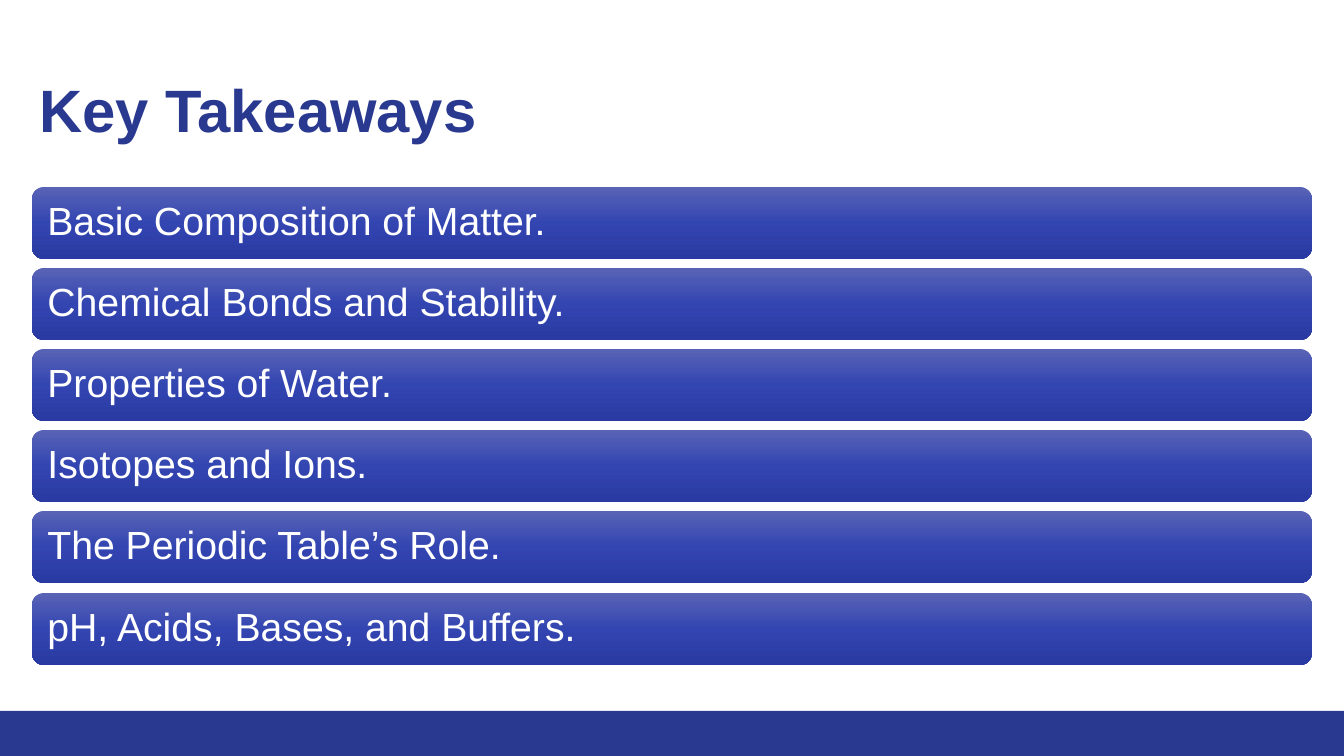
import copy

import pptx
import pptx.dml.color
import pptx.enum.shapes
import pptx.enum.text
import pptx.oxml.ns
import pptx.util

EMU_PER_PX = 12192000 / 1344
COLORS = {
    "navy": "2A3990",
    "white": "FFFFFF",
    "bar_top": "5963B6",
    "bar_middle": "3345B1",
    "bar_bottom": "293AA2",
}
TAKEAWAYS = [
    "Basic Composition of Matter.",
    "Chemical Bonds and Stability.",
    "Properties of Water.",
    "Isotopes and Ions.",
    "The Periodic Table’s Role.",
    "pH, Acids, Bases, and Buffers.",
]
FIRST_TOP, LAST_TOP = 187, 593


def px(length):
    return pptx.util.Emu(round(length * EMU_PER_PX))


def write_text(shape, text, size, color, bold=False):
    frame = shape.text_frame
    frame.word_wrap = True
    frame.auto_size = pptx.enum.text.MSO_AUTO_SIZE.NONE
    frame.vertical_anchor = pptx.enum.text.MSO_ANCHOR.MIDDLE
    paragraph = frame.paragraphs[0]
    paragraph.alignment = pptx.enum.text.PP_ALIGN.LEFT
    paragraph.line_spacing = 0.9
    run = paragraph.add_run()
    run.text = text
    run.font.name = "Arial"
    run.font.size = pptx.util.Pt(size)
    run.font.bold = bold
    run.font.color.rgb = pptx.dml.color.RGBColor.from_string(COLORS[color])


presentation = pptx.Presentation()
presentation.slide_width = px(1344)
presentation.slide_height = px(756)
slide = presentation.slides.add_slide(presentation.slide_layouts[5])

title = slide.shapes.title
title.left, title.top, title.width, title.height = px(29), px(40), px(1279), px(146)
write_text(title, "Key Takeaways", 42.7, "navy", True)

footer = slide.shapes.add_shape(
    pptx.enum.shapes.MSO_SHAPE.RECTANGLE, px(0), px(711), px(1344), px(45)
)
footer.shadow.inherit = False
footer.fill.solid()
footer.fill.fore_color.rgb = pptx.dml.color.RGBColor.from_string(COLORS["navy"])
footer.line.fill.background()

for index, takeaway in enumerate(TAKEAWAYS):
    top = FIRST_TOP + (LAST_TOP - FIRST_TOP) * index // (len(TAKEAWAYS) - 1)
    bar = slide.shapes.add_shape(
        pptx.enum.shapes.MSO_SHAPE.ROUNDED_RECTANGLE, px(32), px(top), px(1280), px(72)
    )
    bar.shadow.inherit = False
    bar.line.fill.background()
    bar.fill.gradient()
    bar.fill.gradient_angle = 270
    stop_list = next(bar.element.iter(pptx.oxml.ns.qn("a:gsLst")))
    stop_list.append(copy.deepcopy(stop_list[-1]))
    for stop, position, color in zip(
        bar.fill.gradient_stops, (0, 0.5, 1), ("bar_top", "bar_middle", "bar_bottom")
    ):
        stop.position = position
        stop.color.rgb = pptx.dml.color.RGBColor.from_string(COLORS[color])
    write_text(bar, takeaway, 28, "white")
    bar.text_frame.margin_left = bar.text_frame.margin_right = px(12)

presentation.save("out.pptx")
